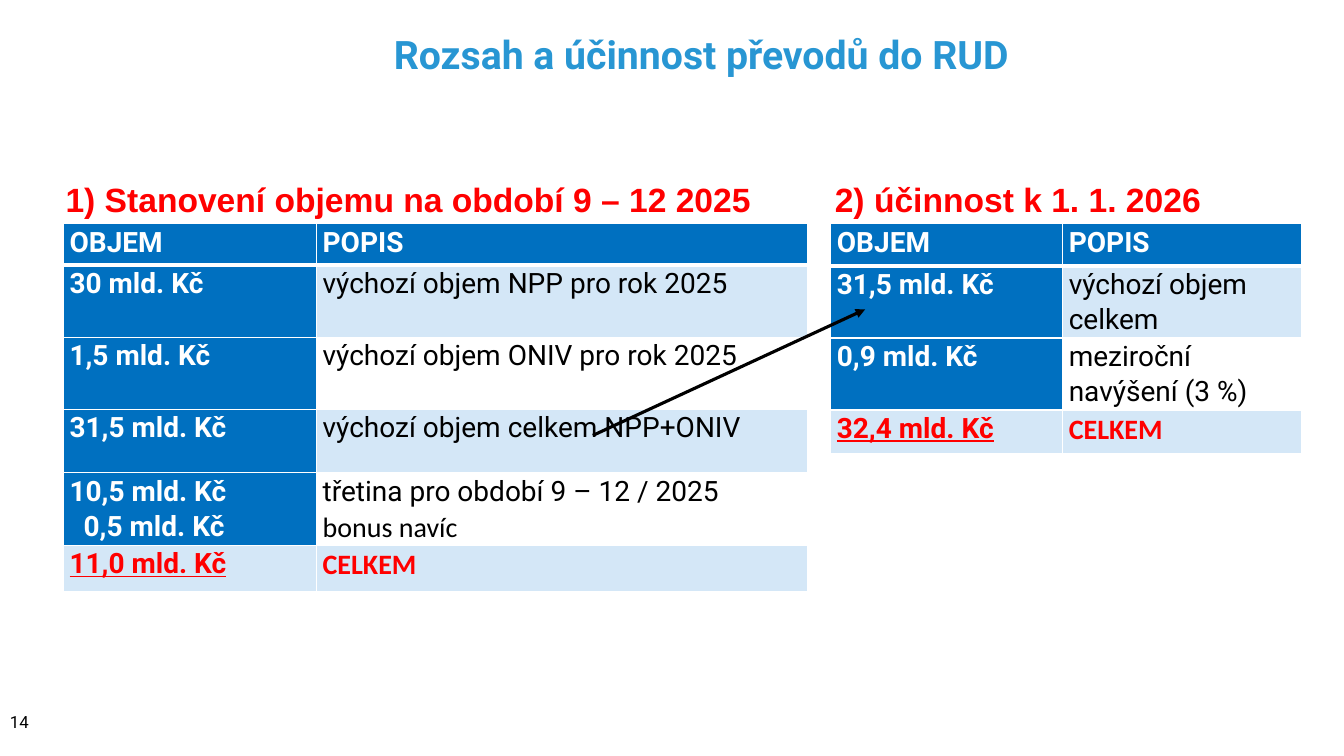
from lxml.etree import SubElement
from pptx import Presentation
from pptx.dml.color import RGBColor
from pptx.enum.shapes import MSO_CONNECTOR
from pptx.enum.text import MSO_ANCHOR, PP_ALIGN
from pptx.oxml.ns import qn
from pptx.util import Inches, Pt

COLORS = {
    "title": "2896D3",
    "red": "FF0000",
    "blue": "0070C0",
    "pale": "D4E7F7",
    "white": "FFFFFF",
    "black": "000000",
}


def write(paragraph, text, size=20, font="Roboto", color="black", bold=False,
          underline=False, align=PP_ALIGN.LEFT, spacing=1.0, indent=0):
    if indent:
        properties = paragraph._p.get_or_add_pPr()
        properties.set("marL", str(Inches(indent)))
        properties.set("indent", "0")
    paragraph.alignment = align
    paragraph.line_spacing = spacing
    run = paragraph.add_run()
    run.text = text
    run.font.size = Pt(size)
    run.font.name = font
    run.font.bold = bold
    run.font.underline = underline
    run.font.color.rgb = RGBColor.from_string(COLORS[color])


def add_border(cell, side, width):
    line = SubElement(cell._tc.get_or_add_tcPr(), qn(f"a:ln{side}"), w=str(Pt(width)))
    fill = SubElement(line, qn("a:solidFill"))
    SubElement(fill, qn("a:srgbClr"), val=COLORS["white"])


presentation = Presentation()
presentation.slide_width = Inches(13.33)
presentation.slide_height = Inches(7.5)
slide = presentation.slides.add_slide(presentation.slide_layouts[5])

title = slide.shapes.title
title.left, title.top = Inches(1), Inches(-0.01)
title.width, title.height = Inches(11.81), Inches(1.08)
title_frame = title.text_frame
title_frame.margin_left = Inches(0.2)
title_frame.word_wrap = False
title_frame.vertical_anchor = MSO_ANCHOR.MIDDLE
write(title_frame.paragraphs[0], "Rozsah a účinnost převodů do RUD", size=28,
      color="title", bold=True, align=PP_ALIGN.CENTER)

headings = [
    ("1) Stanovení objemu na období 9 – 12 2025", 0.63, 7.38),
    ("2) účinnost k 1. 1. 2026", 8.26, 4.55),
]
for text, left, width in headings:
    heading = slide.shapes.add_textbox(Inches(left), Inches(1.73), Inches(width), Inches(0.48))
    heading.text_frame.word_wrap = True
    heading.text_frame.margin_left = Inches(0.02)
    write(heading.text_frame.paragraphs[0], text, size=24, font="Arial", color="red", bold=True)

volumes = [
    {
        "left": 0.63,
        "columns": [2.51, 4.87],
        "heights": [0.41, 0.72, 0.71, 0.63, 0.72, 0.46],
        "rows": [
            ("OBJEM", "POPIS"),
            ("30 mld. Kč", "výchozí objem NPP pro rok 2025"),
            ("1,5 mld. Kč", "výchozí objem ONIV pro rok 2025"),
            ("31,5 mld. Kč", "výchozí objem celkem NPP+ONIV"),
            ("10,5 mld. Kč\n0,5 mld. Kč", "třetina pro období 9 – 12 / 2025\nbonus navíc"),
            ("11,0 mld. Kč", "CELKEM"),
        ],
    },
    {
        "left": 8.24,
        "columns": [2.3, 2.37],
        "heights": [0.42, 0.7, 0.7, 0.43],
        "rows": [
            ("OBJEM", "POPIS"),
            ("31,5 mld. Kč", "výchozí objem celkem"),
            ("0,9 mld. Kč", "meziroční navýšení (3 %)"),
            ("32,4 mld. Kč", "CELKEM"),
        ],
    },
]
for volume in volumes:
    rows, columns, heights = volume["rows"], volume["columns"], volume["heights"]
    table = slide.shapes.add_table(
        len(rows), len(columns), Inches(volume["left"]), Inches(2.22),
        Inches(sum(columns)), Inches(sum(heights))).table
    for column, width in zip(table.columns, columns):
        column.width = Inches(width)
    for row, height in zip(table.rows, heights):
        row.height = Inches(height)

    for r, texts in enumerate(rows):
        header, total = r == 0, r == len(rows) - 1
        for c, text in enumerate(texts):
            cell = table.cell(r, c)
            cell.margin_left = cell.margin_right = Inches(0.06)
            cell.margin_top = cell.margin_bottom = 0
            for side in "LRTB":
                heavy = (header and side == "B") or (r == 1 and side == "T")
                add_border(cell, side, 3 if heavy else 1)

            solid = header or (c == 0 and not total)
            background = "blue" if solid else "pale" if total or r % 2 else "white"
            cell.fill.solid()
            cell.fill.fore_color.rgb = RGBColor.from_string(COLORS[background])

            for i, line in enumerate(text.split("\n")):
                frame = cell.text_frame
                paragraph = frame.add_paragraph() if i else frame.paragraphs[0]
                write(paragraph, line, spacing=1.07, bold=solid or total,
                      color="red" if total else "white" if solid else "black",
                      font="Calibri" if c and (total or i) else "Roboto",
                      underline=total and c == 0,
                      indent=0.14 if i and c == 0 else 0)

page_number = slide.shapes.add_textbox(0, Inches(6.95), Inches(0.48), Inches(0.43))
page_number.text_frame.word_wrap = True
page_number.text_frame.vertical_anchor = MSO_ANCHOR.MIDDLE
write(page_number.text_frame.paragraphs[0], "14", size=12)

arrow = slide.shapes.add_connector(
    MSO_CONNECTOR.STRAIGHT, Inches(5.88), Inches(4.32), Inches(8.58), Inches(3.07))
arrow.line.color.rgb = RGBColor.from_string(COLORS["black"])
arrow.line.width = Pt(2.25)
SubElement(arrow.line._get_or_add_ln(), qn("a:tailEnd"), type="triangle")
SubElement(arrow._element.spPr, qn("a:effectLst"))

presentation.save("out.pptx")
